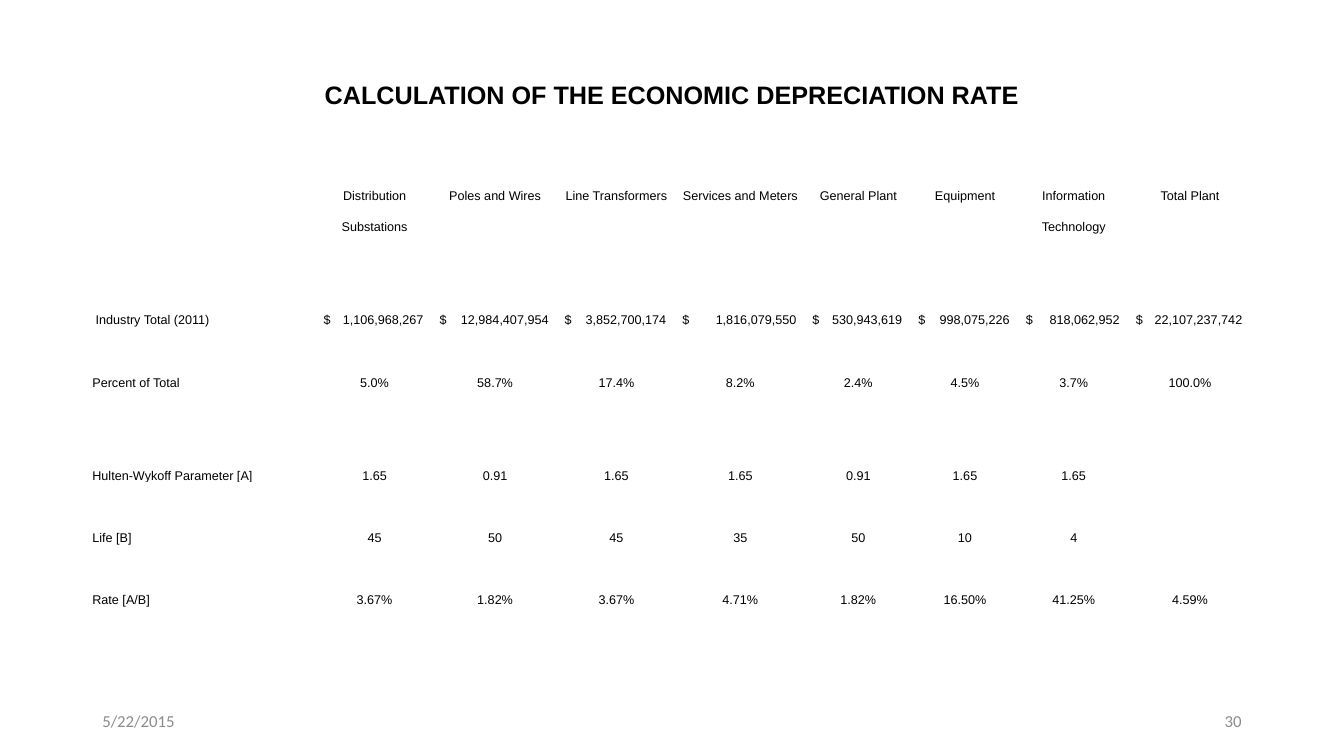
"""Build the slide that calculates the economic depreciation rate."""
import dataclasses
import typing

import lxml.etree
import pptx
import pptx.dml.color
import pptx.enum.text
import pptx.oxml.ns
import pptx.util

ALIGN = pptx.enum.text.PP_ALIGN
ANCHOR = pptx.enum.text.MSO_ANCHOR


@dataclasses.dataclass(frozen=True)
class Style:
    font: str
    size: int
    color: str
    bold: bool = False


@dataclasses.dataclass(frozen=True)
class Theme:
    title: Style = Style("Arial", 18, "000000", True)
    body: Style = Style("Arial", 9, "000000")
    footer: Style = Style("Calibri", 12, "8C8C8C")


@dataclasses.dataclass(frozen=True)
class TableLine:
    row: int
    label: str
    values: tuple[str, ...]
    label_inset: float = 0
    currency: bool = False


@dataclasses.dataclass(frozen=True)
class Footer:
    text: str
    column: float
    align: ALIGN


THEME = Theme()
GRID_COLUMNS, GRID_ROWS = 160, 90
TABLE_LEFT, TABLE_TOP = 11, 6.75
TITLE_HEIGHT, ROW_HEIGHT, ROW_COUNT = 6.36, 3.7, 17
COLUMN_WIDTHS = (22.6, 4.1, 13.8, 14.9, 14, 15.5, 12.6, 12.8, 13.1, 14.6)
FIRST_VALUE_COLUMN = 2
CURRENCY_INSET, CURRENCY_TAB_GAP = 0.84, 1.92
FOOTER_TOP, FOOTER_WIDTH, FOOTER_HEIGHT = 83.4, 36, 4.8

TITLE = "CALCULATION OF THE ECONOMIC DEPRECIATION RATE"
TABLE_LINES = (
    TableLine(3, "", ("Distribution", "Poles and Wires", "Line Transformers", "Services and Meters",
                      "General Plant", "Equipment", "Information", "Total Plant")),
    TableLine(4, "", ("Substations", "", "", "", "", "", "Technology", "")),
    TableLine(7, "Industry Total (2011)",
              ("1,106,968,267", "12,984,407,954", "3,852,700,174", "1,816,079,550",
               "530,943,619", "998,075,226", "818,062,952", "22,107,237,742"),
              label_inset=0.4, currency=True),
    TableLine(9, "Percent of Total",
              ("5.0%", "58.7%", "17.4%", "8.2%", "2.4%", "4.5%", "3.7%", "100.0%")),
    TableLine(12, "Hulten-Wykoff Parameter [A]",
              ("1.65", "0.91", "1.65", "1.65", "0.91", "1.65", "1.65", "")),
    TableLine(14, "Life [B]", ("45", "50", "45", "35", "50", "10", "4", "")),
    TableLine(16, "Rate [A/B]",
              ("3.67%", "1.82%", "3.67%", "4.71%", "1.82%", "16.50%", "41.25%", "4.59%")),
)
FOOTERS = (
    Footer("5/22/2015", TABLE_LEFT, ALIGN.LEFT),
    Footer("30", TABLE_LEFT + sum(COLUMN_WIDTHS) - FOOTER_WIDTH, ALIGN.RIGHT),
)


def grid(units: float) -> pptx.util.Emu:
    """Convert grid units, equal across and down, to a length."""
    return pptx.util.Emu(round(pptx.util.Inches(7.5) * units / GRID_ROWS))


def apply_format(target: typing.Any, values: dict[str, typing.Any]) -> None:
    """Set each attribute named in a dict of format values."""
    for name, value in values.items():
        setattr(target, name, value)


def write(para: typing.Any, text: str, style: Style, align: ALIGN) -> None:
    """Put one styled span in a paragraph."""
    para.alignment = align
    span = para.add_run()
    span.text = text
    apply_format(span.font, {"name": style.font, "size": pptx.util.Pt(style.size), "bold": style.bold})
    span.font.color.rgb = pptx.dml.color.RGBColor.from_string(style.color)


def add_right_tab(para: typing.Any, position: int) -> None:
    """Give a paragraph one right-aligned tab stop."""
    qn = pptx.oxml.ns.qn
    tabs = lxml.etree.SubElement(para._p.get_or_add_pPr(), qn("a:tabLst"))
    lxml.etree.SubElement(tabs, qn("a:tab"), pos=str(position), algn="r")


def fill_line(table: typing.Any, line: TableLine) -> None:
    """Write the label and the values of one table row."""
    if line.label:
        cell = table.cell(line.row, 0)
        cell.margin_left = grid(line.label_inset)
        write(cell.text_frame.paragraphs[0], line.label, THEME.body, ALIGN.LEFT)
    for column, value in enumerate(line.values, FIRST_VALUE_COLUMN):
        if not value:
            continue
        cell = table.cell(line.row, column)
        para = cell.text_frame.paragraphs[0]
        if line.currency:
            cell.margin_left = grid(CURRENCY_INSET)
            write(para, f"$\t{value}", THEME.body, ALIGN.LEFT)
            add_right_tab(para, grid(COLUMN_WIDTHS[column] - CURRENCY_TAB_GAP))
        else:
            write(para, value, THEME.body, ALIGN.CENTER)


def add_rate_table(page: typing.Any) -> None:
    """Add the depreciation table with its title row."""
    heights = [TITLE_HEIGHT] + [ROW_HEIGHT] * (ROW_COUNT - 1)
    table = page.shapes.add_table(
        ROW_COUNT, len(COLUMN_WIDTHS), grid(TABLE_LEFT), grid(TABLE_TOP),
        grid(sum(COLUMN_WIDTHS)), grid(sum(heights))).table
    apply_format(table, {"first_row": False, "horz_banding": False})
    for column, width in zip(table.columns, COLUMN_WIDTHS):
        column.width = grid(width)
    for row, height in zip(table.rows, heights):
        row.height = grid(height)
    for cell in table.iter_cells():
        cell.fill.background()
        apply_format(cell, {"margin_left": 0, "margin_top": 0, "margin_right": 0,
                            "margin_bottom": 0, "vertical_anchor": ANCHOR.BOTTOM})
    title = table.cell(0, 0)
    title.merge(table.cell(0, len(COLUMN_WIDTHS) - 1))
    write(title.text_frame.paragraphs[0], TITLE, THEME.title, ALIGN.CENTER)
    for line in TABLE_LINES:
        fill_line(table, line)


def add_footer(page: typing.Any, footer: Footer) -> None:
    """Add one footer text box."""
    box = page.shapes.add_textbox(grid(footer.column), grid(FOOTER_TOP),
                                  grid(FOOTER_WIDTH), grid(FOOTER_HEIGHT))
    apply_format(box.text_frame, {"word_wrap": True, "vertical_anchor": ANCHOR.MIDDLE})
    write(box.text_frame.paragraphs[0], footer.text, THEME.footer, footer.align)


def main() -> None:
    """Create and save the deck."""
    deck = pptx.Presentation()
    apply_format(deck, {"slide_width": grid(GRID_COLUMNS), "slide_height": grid(GRID_ROWS)})
    page = deck.slides.add_slide(deck.slide_layouts[6])
    add_rate_table(page)
    for footer in FOOTERS:
        add_footer(page, footer)
    deck.save("out.pptx")


if __name__ == "__main__":
    main()
